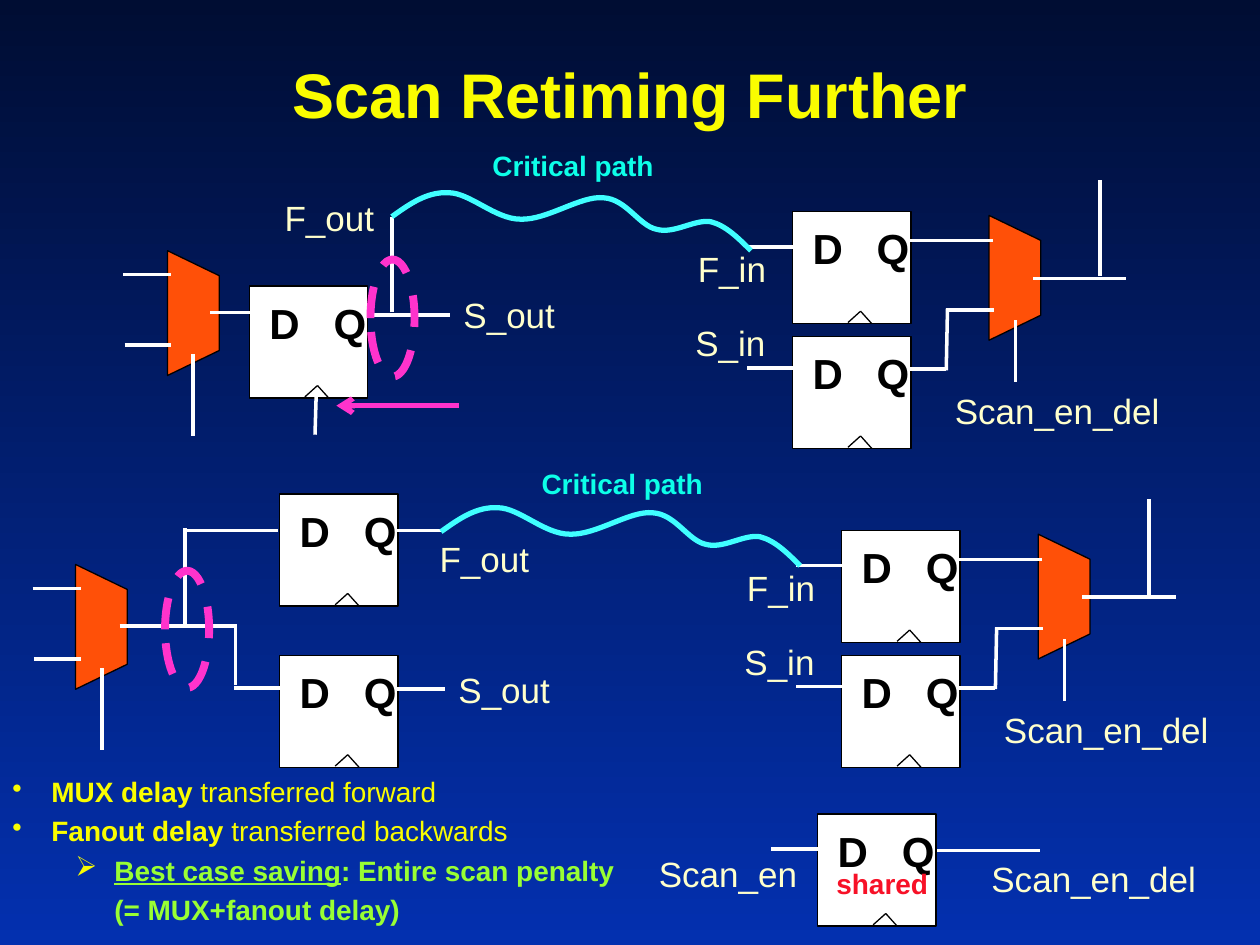
"""Build the scan retiming slide with its two circuit stages."""
from lxml.etree import SubElement
from pptx import Presentation
from pptx.dml.color import RGBColor
from pptx.enum.dml import MSO_LINE
from pptx.enum.shapes import MSO_CONNECTOR as Link, MSO_SHAPE as Form
from pptx.enum.text import MSO_ANCHOR as Anchor, MSO_AUTO_SIZE as Fit, PP_ALIGN as Align
from pptx.oxml.ns import qn
from pptx.util import Cm, Pt

BLACK = RGBColor(0x00, 0x00, 0x00)
WHITE = RGBColor(0xFF, 0xFF, 0xFF)
YELLOW = RGBColor(0xFA, 0xFD, 0x00)
CREAM = RGBColor(0xFF, 0xFF, 0xCC)
ORANGE = RGBColor(0xFF, 0x50, 0x08)
PINK = RGBColor(0xFF, 0x33, 0xCC)
CYAN = RGBColor(0x40, 0xFF, 0xFF)
AQUA = RGBColor(0x0D, 0xFF, 0xE8)
RED = RGBColor(0xF7, 0x11, 0x27)
GREEN = RGBColor(0x99, 0xFF, 0x33)
NIGHT = RGBColor(0x00, 0x0D, 0x33)
BLUE = RGBColor(0x03, 0x30, 0xAF)

FLOPS = [(1.98, 2.27), (6.29, 1.68), (6.29, 2.67), (2.22, 3.92),
         (2.22, 5.2), (6.68, 4.21), (6.68, 5.2), (6.49, 6.46)]
MUXES = [(1.04, 2.28), (0.31, 4.77), (7.56, 2), (7.95, 4.53)]

LEFT = [(0, 0), (-0.72, 2.49)]
RIGHT = [(0, 0), (0.39, 2.53)]
LEFT_WIRES = [
    (0.98, 2.18, 1.36, 2.18), (0.99, 2.74, 1.36, 2.74),
    (1.67, 2.48, 2.04, 2.48), (1.53, 3.46, 1.53, 2.81)]
RIGHT_WIRES = [
    (5.93, 1.96, 6.31, 1.96), (5.93, 2.92, 6.31, 2.92),
    (7.19, 1.91, 7.88, 1.91), (7.22, 2.93, 7.51, 2.93),
    (7.51, 2.94, 7.52, 2.45), (7.51, 2.46, 7.89, 2.46),
    (8.2, 2.21, 8.94, 2.21), (8.06, 3.03, 8.06, 2.54),
    (8.73, 2.19, 8.73, 1.43)]
WIRES = [
    (2.94, 2.5, 3.57, 2.5), (2.5, 3.45, 2.51, 3.12), (3.11, 2.48, 3.11, 1.72),
    (1.31, 4.97, 1.88, 4.97), (1.47, 4.96, 1.47, 4.19), (1.47, 4.21, 2.21, 4.21),
    (1.87, 5.44, 1.87, 4.97), (1.86, 5.46, 2.24, 5.46),
    (3.15, 4.21, 3.53, 4.21), (3.15, 5.47, 3.53, 5.47),
    (6.12, 6.74, 6.5, 6.74), (7.44, 6.75, 8.25, 6.75)]
CLOCK = [(0.44, 0.88, 0.54, 0.79), (0.54, 0.79, 0.63, 0.89)]

PATH = [(3.11, 1.72), (3.25, 1.62), (3.39, 1.52), (3.56, 1.53),
        (3.73, 1.53), (3.93, 1.74), (4.13, 1.74), (4.34, 1.75),
        (4.61, 1.55), (4.79, 1.57), (4.97, 1.58), (5.07, 1.79),
        (5.21, 1.82), (5.35, 1.86), (5.51, 1.74), (5.64, 1.76),
        (5.76, 1.79), (5.86, 1.89), (5.96, 1.99)]
PATHS = [(0, 0), (0.39, 2.5)]
RINGS = [(2.94, 2.06), (1.31, 4.53)]

RIGHT_TAGS = [("F_in", 5.44, 1.83, 0.75), ("S_in", 5.42, 2.42, 0.76),
              ("Scan_en_del", 7.48, 2.96, 1.84)]
TAGS = [("F_out", 2.16, 1.43, 0.92), ("S_out", 3.58, 2.2, 0.93),
        ("F_out", 3.39, 4.13, 0.93), ("S_out", 3.54, 5.17, 0.93),
        ("Scan_en", 5.13, 6.63, 1.31), ("Scan_en_del", 7.77, 6.67, 1.84)]

NOTES = [
    ("•", 0.31, YELLOW, [("MUX delay ", True, False), ("transferred forward", False, False)]),
    ("•", 0.31, YELLOW, [("Fanout delay ", True, False), ("transferred backwards", False, False)]),
    ("➢", 0.81, GREEN, [("Best case saving", True, True),
                        (": Entire scan penalty", True, False)]),
    ("", 0.81, GREEN, [("(= MUX+fanout delay)", True, False)])]

deck = Presentation()


def size(*vals):
    return [Cm(val * 2.54) for val in vals]


deck.slide_width, deck.slide_height = size(10, 7.5)
slide = deck.slides.add_slide(deck.slide_layouts[6])
shapes = slide.shapes


def style(run, pts, color, bold):
    run.font.name, run.font.size, run.font.bold = "Arial", Pt(pts), bold
    run.font.color.rgb = color


def space(para):
    gap = para._p.get_or_add_pPr().get_or_add_spcBef()
    SubElement(gap, qn("a:spcPct"), val="20000")


def label(text, x, y, wide, tall, pts=20, color=CREAM, bold=False):
    box = shapes.add_textbox(*size(x, y, wide, tall))
    frame = box.text_frame
    frame.text = text
    frame.word_wrap = False
    frame.auto_size = Fit.SHAPE_TO_FIT_TEXT
    para = frame.paragraphs[0]
    para.line_spacing = 1.25
    space(para)
    style(para.runs[0], pts, color, bold)
    return frame


def wire(ends, color=WHITE, pts=2, dx=0, dy=0):
    x1, y1, x2, y2 = ends
    line = shapes.add_connector(Link.STRAIGHT, *size(x1 + dx, y1 + dy, x2 + dx, y2 + dy))
    line.line.color.rgb = color
    line.line.width = Pt(pts)
    SubElement(line._element.spPr, qn("a:effectLst"))
    return line


def block(form, x, y, wide, tall, fill, edge=BLACK, pts=0.75):
    item = shapes.add_shape(form, *size(x, y, wide, tall))
    item.shadow.inherit = False
    if fill is None:
        item.fill.background()
    else:
        item.fill.solid()
        item.fill.fore_color.rgb = fill
    item.line.color.rgb = edge
    item.line.width = Pt(pts)
    return item


def flop(x, y):
    block(Form.RECTANGLE, x, y, 0.94, 0.89, WHITE)
    for text, dx in (("D", 0.06), ("Q", 0.57)):
        label(text, x + dx, y - 0.06, 0.45, 0.6, 24, BLACK, True)
    for ends in CLOCK:
        wire(ends, BLACK, 0.75, x, y)


def curve(dx, dy):
    first, *rest = [size(x + dx, y + dy) for x, y in PATH]
    form = shapes.build_freeform(*first)
    form.add_line_segments(rest, close=False)
    item = form.convert_to_shape()
    item.shadow.inherit = False
    item.fill.background()
    item.line.color.rgb = CYAN
    item.line.width = Pt(3)
    legs = list(item._element.iter(qn("a:lnTo")))
    root = legs[0].getparent()
    for at in range(0, len(legs), 3):
        bend = SubElement(root, qn("a:cubicBezTo"))
        for leg in legs[at:at + 3]:
            bend.append(leg[0])
            root.remove(leg)


def notes():
    frame = shapes.add_textbox(*size(0, 6.1, 5.19, 1.34)).text_frame
    frame.word_wrap = True
    for at, (mark, left, color, parts) in enumerate(NOTES):
        para = frame.paragraphs[0] if at == 0 else frame.add_paragraph()
        for text, bold, under in parts:
            run = para.add_run()
            run.text = text
            style(run, 16, color, bold)
            run.font.underline = under
        space(para)
        props = para._p.get_or_add_pPr()
        props.set("marL", str(size(left + 0.1)[0] if not mark else size(left)[0]))
        if mark:
            props.set("indent", str(size(-0.31)[0]))
            tint = SubElement(props, qn("a:buClr"))
            SubElement(tint, qn("a:srgbClr"), val=str(YELLOW))
            SubElement(props, qn("a:buChar"), char=mark)
        else:
            props.set("marL", str(size(left)[0]))


fill = slide.background.fill
fill.gradient()
fill.gradient_angle = 270
for stop, color in zip(fill.gradient_stops, (NIGHT, BLUE)):
    stop.color.rgb = color

title = label("Scan Retiming Further", 0, 0.37, 10, 0.72, 36, YELLOW, True)
title.word_wrap, title.auto_size = True, Fit.NONE
title.vertical_anchor = Anchor.BOTTOM
title.paragraphs[0].alignment = Align.CENTER

for spot in FLOPS:
    flop(*spot)
for x, y in MUXES:
    block(Form.FLOWCHART_MANUAL_OPERATION, x, y, 0.99, 0.41, ORANGE).rotation = 270
for group, shifts in ((LEFT_WIRES, LEFT), (RIGHT_WIRES, RIGHT), (WIRES, [(0, 0)])):
    for dx, dy in shifts:
        for ends in group:
            wire(ends, dx=dx, dy=dy)
for shift in PATHS:
    curve(*shift)
for x, y in RINGS:
    block(Form.OVAL, x, y, 0.35, 0.93, None, PINK, 4.5).line.dash_style = MSO_LINE.DASH
arrow = wire((2.67, 3.22, 3.64, 3.22), PINK, 3)
SubElement(arrow.line._get_or_add_ln(), qn("a:headEnd"), type="arrow")

for dx, dy in RIGHT:
    label("Critical path", 3.81 + dx, 1.06 + dy, 1.5, 0.43, 16, AQUA, True)
    for text, x, y, wide in RIGHT_TAGS:
        label(text, x + dx, y + dy, wide, 0.51)
for text, x, y, wide in TAGS:
    label(text, x, y, wide, 0.51)
label("shared", 6.54, 6.76, 0.94, 0.43, 16, RED, True)
notes()

deck.save("out.pptx")
